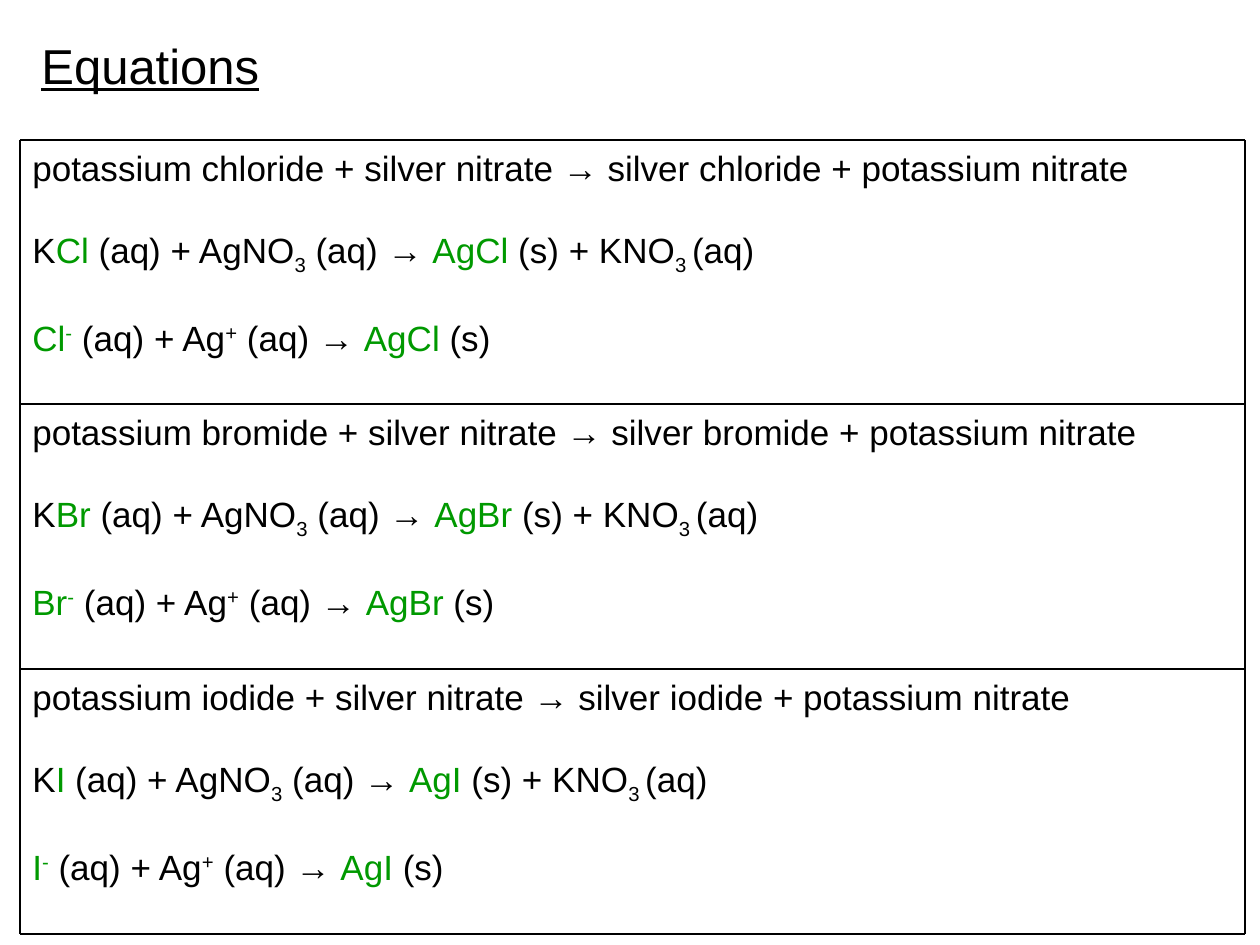
from pptx import Presentation
from pptx.dml.color import RGBColor as Rgb
from pptx.enum.shapes import MSO_CONNECTOR as Conn
from pptx.oxml.ns import qn
from pptx.util import Emu, Pt
from lxml.etree import SubElement as Sub

PX = 914400 / 126
THEME = {
    "font": "Arial", "ink": Rgb(0, 0, 0), "halide": Rgb(0, 0x99, 0),
    "title": 28, "body": 20, "gap": 23, "line": 1,
}


def px(*nums):
    return [Emu(round(n * PX)) for n in nums]


def write(para, text, size=THEME["body"], color=THEME["ink"], base=0, under=False):
    run = para.add_run()
    run.text = text
    font = run.font
    font.name, font.size = THEME["font"], Pt(size)
    font.color.rgb = color
    if under:
        font.underline = True
    if base:
        font._element.set("baseline", str(base * 1000))


deck = Presentation()
deck.slide_width, deck.slide_height = px(1260, 945)
slide = deck.slides.add_slide(deck.slide_layouts[6])
shapes = slide.shapes

# Title
head = shapes.add_textbox(*px(29, 29, 246, 72)).text_frame
head.word_wrap = False
write(head.paragraphs[0], "Equations", size=THEME["title"], under=True)

# Grid of three equal rows
left, right, top, tall = 20, 1245, 140, 794
rows = [top + tall * i // 3 for i in range(4)]

# Word, full and ionic equation for each halide
green = {"color": THEME["halide"]}
low, high = {"base": -25}, {"base": 30}
salts = [("chloride", "Cl"), ("bromide", "Br"), ("iodide", "I")]
for (name, sym), y, end in zip(salts, rows, rows[1:]):
    frame = shapes.add_textbox(*px(left, y, right - left, end - y)).text_frame
    frame.word_wrap = True
    lines = [
        [(f"potassium {name} + silver nitrate → silver {name} + potassium nitrate", {})],
        [("K", {}), (sym, green), (" (aq) + AgNO", {}), ("3", low), (" (aq) → ", {}),
         ("Ag" + sym, green), (" (s) + KNO", {}), ("3 ", low), ("(aq)", {})],
        [(sym, green), ("-", green | high), (" (aq) + Ag", {}), ("+", high),
         (" (aq) → ", {}), ("Ag" + sym, green), (" (s)", {})],
    ]
    for i, line in enumerate(lines):
        para = frame.add_paragraph() if i else frame.paragraphs[0]
        if i:
            para.space_before = Pt(THEME["gap"])
        for text, style in line:
            write(para, text, **style)

# Rules: four across, two down
rules = [(left, y, right, y) for y in rows]
rules += [(x, rows[0], x, rows[-1]) for x in (left, right)]
for ends in rules:
    rule = shapes.add_connector(Conn.STRAIGHT, *px(*ends))
    rule.line.color.rgb = THEME["ink"]
    rule.line.width = Pt(THEME["line"])
    Sub(rule._element.spPr, qn("a:effectLst"))

deck.save("out.pptx")
